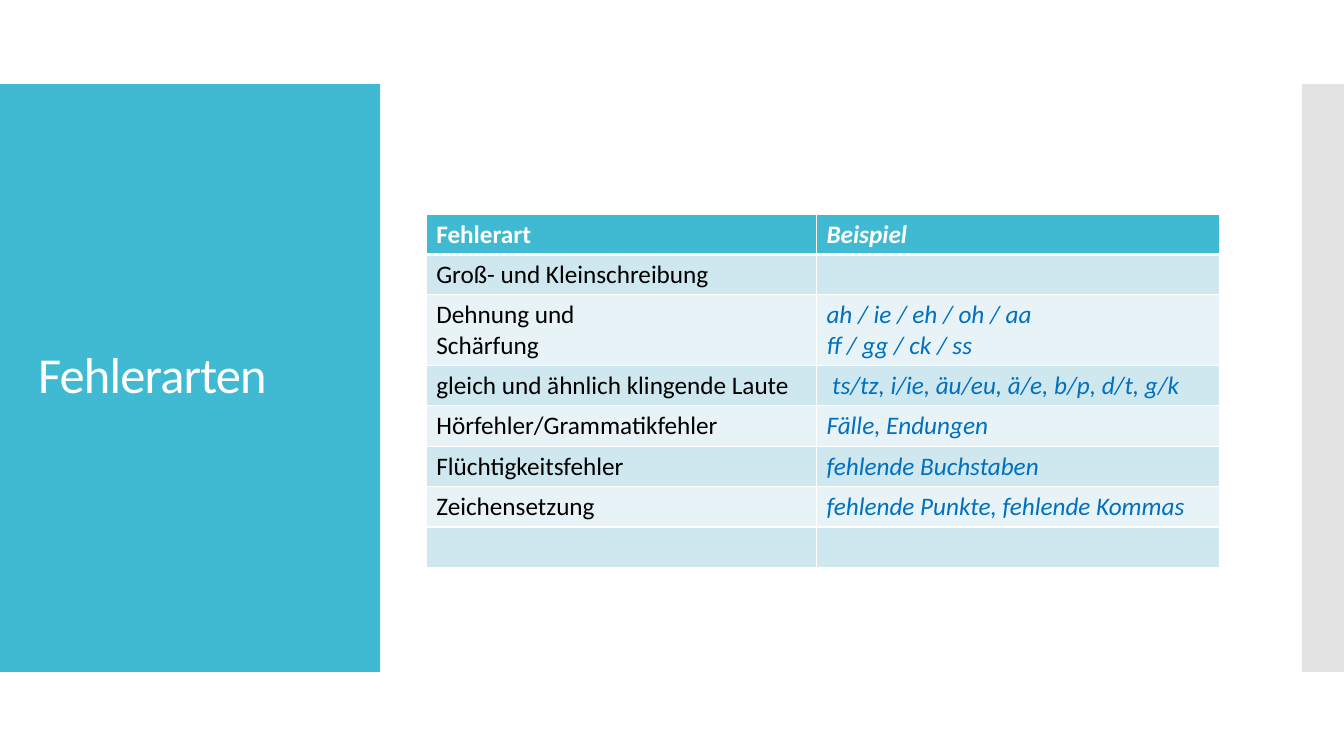
from lxml.etree import SubElement
from pptx import Presentation
from pptx.dml.color import RGBColor
from pptx.enum.shapes import MSO_SHAPE
from pptx.enum.text import MSO_ANCHOR
from pptx.oxml.ns import qn
from pptx.util import Inches, Pt

TEAL = RGBColor(0x40, 0xBA, 0xD2)
GREY = RGBColor(0xC8, 0xC8, 0xC8)
WHITE = RGBColor(0xFF, 0xFF, 0xFF)
BLACK = RGBColor(0, 0, 0)
BLUE = RGBColor(0x00, 0x70, 0xC0)
BAND_DARK = RGBColor(0xCF, 0xE7, 0xEE)
BAND_LIGHT = RGBColor(0xE8, 0xF3, 0xF7)

ERROR_TYPES = [
    ("Fehlerart", "Beispiel"),
    ("Groß- und Kleinschreibung", ""),
    ("Dehnung und\nSchärfung", "ah / ie / eh / oh / aa\nff / gg / ck / ss"),
    ("gleich und ähnlich klingende Laute", " ts/tz, i/ie, äu/eu, ä/e, b/p, d/t, g/k"),
    ("Hörfehler/Grammatikfehler", "Fälle, Endungen"),
    ("Flüchtigkeitsfehler", "fehlende Buchstaben"),
    ("Zeichensetzung", "fehlende Punkte, fehlende Kommas"),
    ("", ""),
]


class SlideBuilder:
    COLUMNS, ROWS = 32, 18
    FONT = "Calibri"

    def __init__(self, presentation):
        self.column = presentation.slide_width / self.COLUMNS
        self.row = presentation.slide_height / self.ROWS
        self.slide = presentation.slides.add_slide(presentation.slide_layouts[6])

    def place(self, left, top, width, height):
        return (int(left * self.column), int(top * self.row),
                int(width * self.column), int(height * self.row))

    def fill_text(self, frame, text, color, **format_values):
        frame.text = text
        for paragraph in frame.paragraphs:
            for run in paragraph.runs:
                run.font.color.rgb = color
                for name, value in {"name": self.FONT, **format_values}.items():
                    setattr(run.font, name, value)

    def panel(self, area, color, opacity=100):
        panel = self.slide.shapes.add_shape(MSO_SHAPE.RECTANGLE, *self.place(*area))
        panel.shadow.inherit = False
        panel.line.fill.background()
        panel.fill.solid()
        panel.fill.fore_color.rgb = color
        if opacity < 100:
            shade = panel._element.spPr.find(qn("a:solidFill"))[0]
            SubElement(shade, qn("a:alpha"), val=str(opacity * 1000))

    def title(self, area, text):
        frame = self.slide.shapes.add_textbox(*self.place(*area)).text_frame
        frame.word_wrap = True
        frame.vertical_anchor = MSO_ANCHOR.MIDDLE
        self.fill_text(frame, text, WHITE, size=Pt(36))
        heading = frame.paragraphs[0]
        heading.line_spacing = 0.9
        heading.runs[0].font._element.set("spc", "-60")

    def borders(self, cell, widths):
        properties = cell._tc.get_or_add_tcPr()
        for side, width in widths.items():
            line = SubElement(properties, qn(f"a:ln{side}"), w=str(Pt(width)))
            fill = SubElement(line, qn("a:solidFill"))
            SubElement(fill, qn("a:srgbClr"), val=str(WHITE))

    def table(self, left, top, widths, line_height, entries):
        area = self.place(left, top, sum(widths), line_height * len(entries))
        table = self.slide.shapes.add_table(len(entries), len(widths), *area).table
        for column, width in zip(table.columns, widths):
            column.width = int(width * self.column)
        for index, entry in enumerate(entries):
            lines = entry[0].count("\n") + 1
            table.rows[index].height = int(line_height * self.row + (lines - 1) * Inches(0.3))
            header = index == 0
            band = TEAL if header else BAND_DARK if index % 2 else BAND_LIGHT
            for position, text in enumerate(entry):
                cell = table.cell(index, position)
                example = position == 1
                self.borders(cell, {"L": 1, "R": 1, "T": 3 if index == 1 else 1,
                                    "B": 3 if header else 1})
                cell.fill.solid()
                cell.fill.fore_color.rgb = band
                color = WHITE if header else BLUE if example else BLACK
                self.fill_text(cell.text_frame, text, color,
                               size=Pt(18), bold=header, italic=example)


def main():
    presentation = Presentation()
    presentation.slide_width = Inches(13.33)
    presentation.slide_height = Inches(7.5)
    builder = SlideBuilder(presentation)
    builder.panel((0, 2, 9.05, 14), TEAL)
    builder.panel((31, 2, 1, 14), GREY, opacity=50)
    builder.title((0.67, 2.95, 7.73, 12.07), "Fehlerarten")
    builder.table(10.15, 5.1, (9.29, 9.6), 0.96, ERROR_TYPES)
    presentation.save("out.pptx")


if __name__ == "__main__":
    main()
